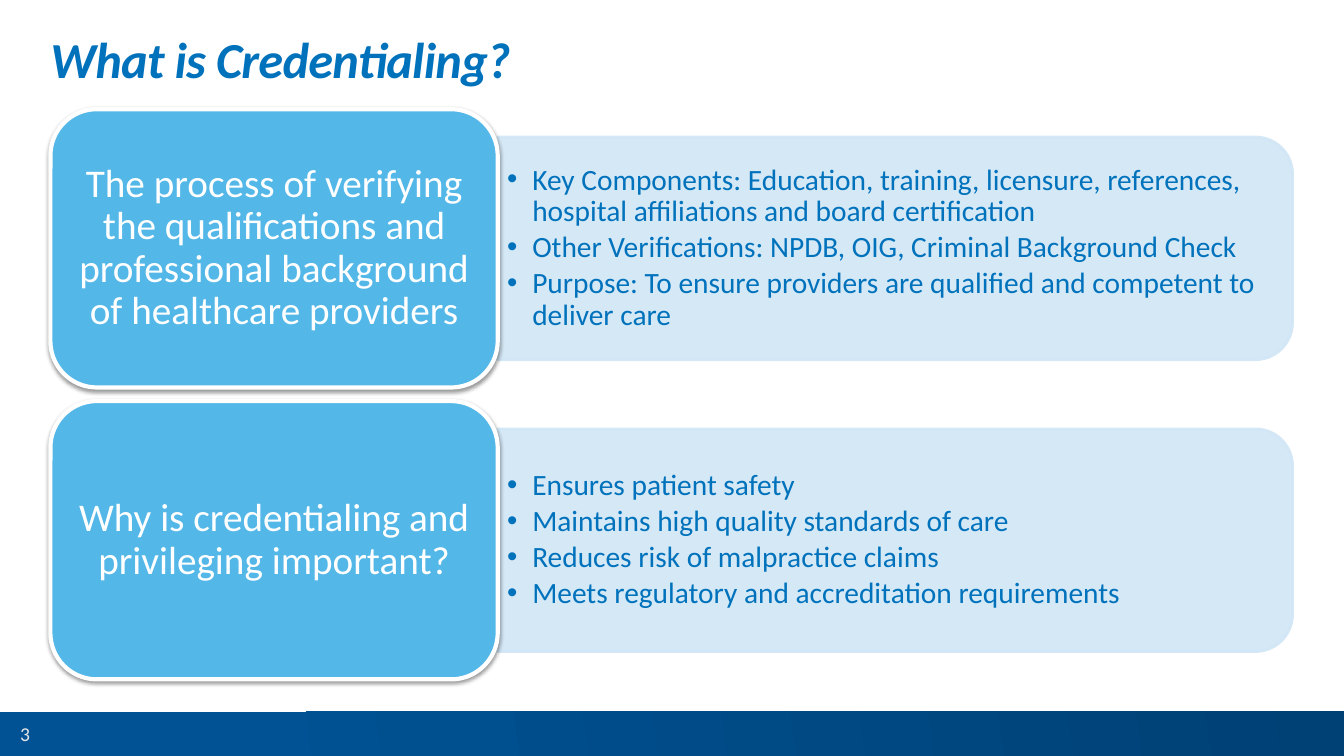
import pptx
import pptx.util
import pptx.dml.color
import pptx.enum.shapes
import pptx.enum.text
import pptx.oxml
import pptx.oxml.ns

PX = 9525  # EMU per px, 96 px to the inch
FONT = "Calibri"
COLORS = {
    "blue": "0072BC", "card": "53B7E8", "panel": "D1E6F6", "white": "FFFFFF",
    "bar_left": "005294", "bar_right": "004175", "number": "E6E7E8",
}
ROWS = [
    ("The process of verifying the qualifications and professional background "
     "of healthcare providers",
     ["Key Components: Education, training, licensure, references, "
      "hospital affiliations and board certification",
      "Other Verifications: NPDB, OIG, Criminal Background Check",
      "Purpose: To ensure providers are qualified and competent to deliver care"]),
    ("Why is credentialing and privileging important?",
     ["Ensures patient safety",
      "Maintains high quality standards of care",
      "Reduces risk of malpractice claims",
      "Meets regulatory and accreditation requirements"]),
]
SHAPE = pptx.enum.shapes.MSO_SHAPE
ANCHOR = pptx.enum.text.MSO_ANCHOR
CENTER = pptx.enum.text.PP_ALIGN.CENTER


def px(*values):
    return [pptx.util.Emu(round(v * PX)) for v in values]


def rgb(name):
    return pptx.dml.color.RGBColor.from_string(COLORS[name])


def xml(tag, inner="", **attrs):
    text = "".join(f' {k}="{v}"' for k, v in attrs.items())
    return pptx.oxml.parse_xml(
        f'<a:{tag} {pptx.oxml.ns.nsdecls("a")}{text}>{inner}</a:{tag}>')


def add_block(s, kind, box, fill, line, weight):
    sp = s.shapes.add_shape(kind, *px(*box))
    sp.shadow.inherit = False
    sp.fill.solid()
    sp.fill.fore_color.rgb = rgb(fill)
    sp.line.color.rgb = rgb(line)
    sp.line.width = pptx.util.Pt(weight)
    return sp


def write(sp, lines, size, color, insets=(0, 0), anchor=ANCHOR.MIDDLE,
          align=None, spacing=0.9, after=0, bullets=False):
    tf = sp.text_frame
    tf.word_wrap = True
    tf.vertical_anchor = anchor
    tf.margin_left = tf.margin_right = px(insets[0])[0]
    tf.margin_top = tf.margin_bottom = px(insets[1])[0]
    tf.text = "\n".join(lines)
    for p in tf.paragraphs:
        p.alignment = align
        p.line_spacing = spacing
        p.space_after = pptx.util.Pt(after)
        if bullets:
            pPr = p._p.get_or_add_pPr()
            indent = px(24)[0]
            pPr.set("marL", str(indent))
            pPr.set("indent", str(-indent))
            pPr.append(xml("buFont", typeface="Arial"))
            pPr.append(xml("buChar", char="•"))
        for r in p.runs:
            r.font.name = FONT
            r.font.size = pptx.util.Pt(size)
            r.font.color.rgb = rgb(color)
    return tf


def add_title(s, box, text):
    tb = s.shapes.add_textbox(*px(*box))
    tf = write(tb, [text], 36, "blue", anchor=ANCHOR.TOP, spacing=0.85)
    r = tf.paragraphs[0].runs[0]
    r.font.bold = r.font.italic = True
    r._r.get_or_add_rPr().set("spc", "-50")


def add_footer(s, box, number):
    left, top, width, height = box
    bar = s.shapes.add_shape(SHAPE.RECTANGLE, *px(*box))
    bar.shadow.inherit = False
    bar.line.fill.background()
    bar.fill.gradient()
    bar.fill.gradient_angle = 8
    stops = [(0.18, "bar_left"), (1, "bar_right")]
    for stop, (position, color) in zip(bar.fill.gradient_stops, stops):
        stop.position = position
        stop.color.rgb = rgb(color)
    tb = s.shapes.add_textbox(*px(left, top, 48, height))
    write(tb, [number], 14, "number", (10, 5), align=CENTER, spacing=1)


def add_row(s, box, heading, points):
    left, top, width, height = box
    card_w, panel_h = 426, 212
    panel_w = width - card_w
    mid_x, mid_y = left + card_w + panel_w / 2, top + height / 2

    # Panel: rounded top corners, turned to face right
    panel = add_block(s, SHAPE.ROUND_2_SAME_RECTANGLE,
                      (mid_x - panel_h / 2, mid_y - panel_w / 2, panel_h, panel_w),
                      "panel", "panel", 2)
    panel.rotation = 90
    for color in panel._element.spPr.iter(pptx.oxml.ns.qn("a:srgbClr")):
        color.append(xml("alpha", val=90000))

    # Bullet points
    tb = s.shapes.add_textbox(*px(left + card_w, mid_y - 95, panel_w - 10, 190))
    write(tb, points, 21, "blue", (9, 4), after=3, bullets=True)

    # Heading card with a soft shadow below
    card = add_block(s, SHAPE.ROUNDED_RECTANGLE, (left, top, card_w, height),
                     "card", "white", 3)
    effects = card._element.spPr.find(pptx.oxml.ns.qn("a:effectLst"))
    effects.append(xml(
        "outerShdw", '<a:srgbClr val="000000"><a:alpha val="38000"/></a:srgbClr>',
        blurRad=39400, dist=20300, dir=5400000, rotWithShape=0))
    write(card, [heading], 28, "white", (12, 6), align=CENTER)


def main():
    prs = pptx.Presentation()
    prs.slide_width, prs.slide_height = px(1280, 720)
    s = prs.slides.add_slide(prs.slide_layouts[6])
    add_footer(s, (0, 678, 1280, 42), "3")
    add_title(s, (48, 36, 1184, 52), "What is Credentialing?")
    for i, (heading, points) in enumerate(ROWS):
        add_row(s, (48, 104 + 278 * i, 1183, 265), heading, points)
    prs.save("out.pptx")


if __name__ == "__main__":
    main()
